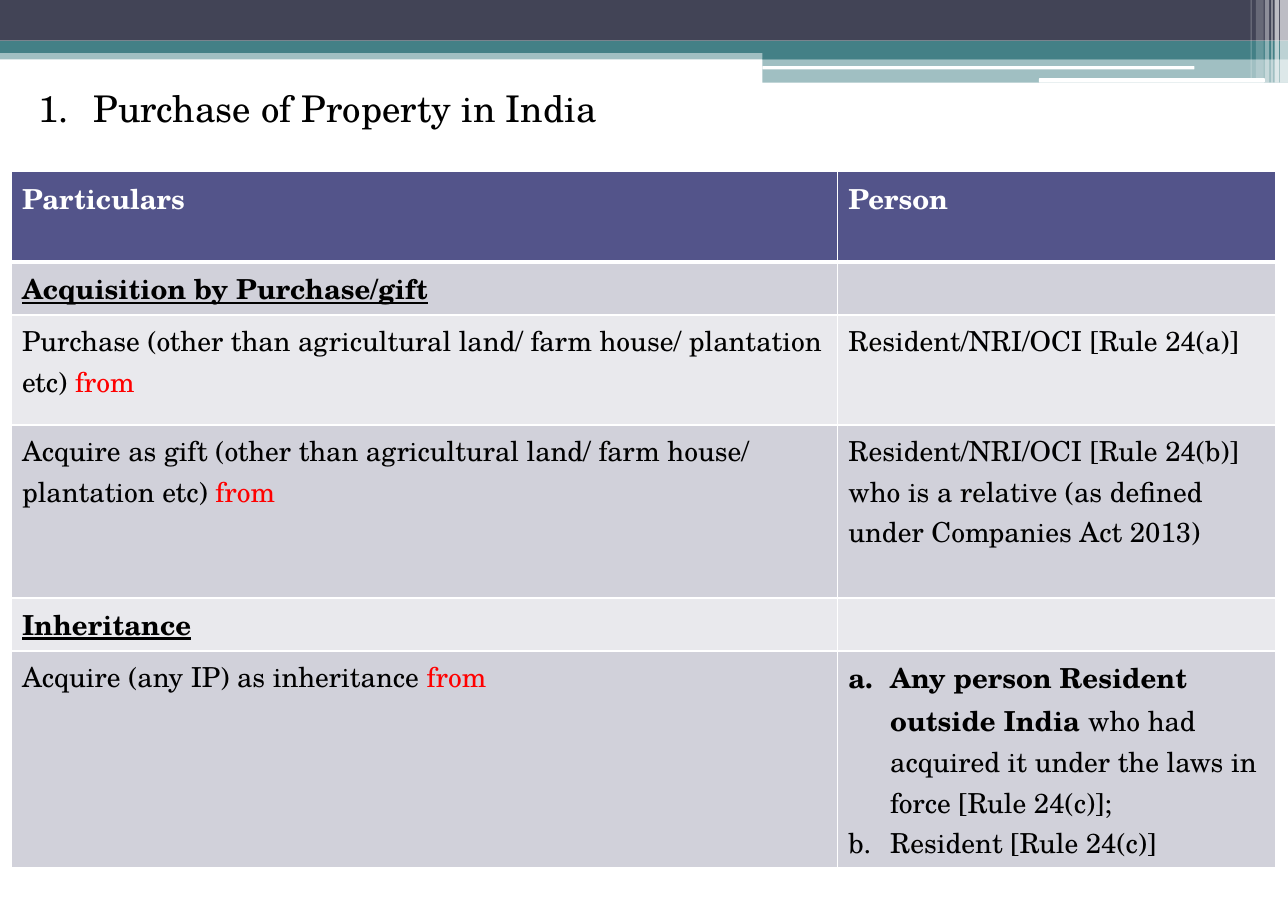
from lxml import etree
from pptx import Presentation
from pptx import util as u
from pptx.dml.color import RGBColor
from pptx.enum import shapes, text
from pptx.oxml import ns

FONT = "TeX Gyre Schola"
WHITE = RGBColor(0xFF, 0xFF, 0xFF)
BLACK = RGBColor(0, 0, 0)
RED = RGBColor(0xFF, 0, 0)
NAVY = RGBColor(0x42, 0x44, 0x56)
TEAL = RGBColor(0x43, 0x80, 0x86)
INDIGO = RGBColor(0x53, 0x54, 0x8A)
BAND_DARK = RGBColor(0xD1, 0xD1, 0xDA)
BAND_LIGHT = RGBColor(0xE9, 0xE9, 0xED)


def add_run(paragraph, words, size=18, color=BLACK, bold=False, underline=False):
    run = paragraph.add_run()
    run.text = words
    font = run.font
    font.name, font.size, font.bold, font.underline = FONT, u.Pt(size), bold, underline
    font.color.rgb = color


def number_paragraph(paragraph, style, margin, indent):
    properties = paragraph._p.get_or_add_pPr()
    properties.set("marL", str(u.Inches(margin)))
    properties.set("indent", str(u.Inches(indent)))
    bullet_font = etree.SubElement(properties, ns.qn("a:buFont"))
    bullet_font.set("typeface", FONT)
    etree.SubElement(properties, ns.qn("a:buAutoNum")).set("type", style)


presentation = Presentation()
presentation.slide_width = u.Inches(11.69)
presentation.slide_height = u.Inches(8.27)
slide = presentation.slides.add_slide(presentation.slide_layouts[6])

RECT = shapes.MSO_SHAPE.RECTANGLE
ROUND = shapes.MSO_SHAPE.ROUNDED_RECTANGLE
banner = [
    (RECT, 0, 0.44, 11.69, 0.1, TEAL, 50),
    (RECT, 0, 0, 11.69, 0.37, NAVY, 100),
    (RECT, 0, 0.37, 11.69, 0.11, TEAL, 100),
    (RECT, 6.92, 0.43, 4.77, 0.11, TEAL, 100),
    (RECT, 6.92, 0.53, 4.77, 0.22, TEAL, 50),
    (ROUND, 6.92, 0.6, 3.92, 0.03, WHITE, 100),
    (ROUND, 9.43, 0.71, 2.05, 0.04, WHITE, 100),
    (RECT, 11.62, 0, 0.07, 0.75, WHITE, 65),
    (RECT, 11.57, 0, 0.04, 0.75, WHITE, 65),
    (RECT, 11.54, 0, 0.01, 0.75, WHITE, 60),
    (RECT, 11.48, 0, 0.04, 0.75, WHITE, 40),
    (RECT, 11.4, 0, 0.07, 0.71, WHITE, 20),
    (RECT, 11.35, 0, 0.01, 0.71, WHITE, 30),
]
for kind, left, top, width, height, color, opacity in banner:
    shape = slide.shapes.add_shape(
        kind, u.Inches(left), u.Inches(top), u.Inches(width), u.Inches(height))
    shape.shadow.inherit = False
    shape.line.fill.background()
    shape.fill.solid()
    shape.fill.fore_color.rgb = color
    if opacity < 100:
        color_element = shape._element.spPr.find(ns.qn("a:solidFill"))[0]
        etree.SubElement(color_element, ns.qn("a:alpha")).set("val", str(opacity * 1000))

title = slide.shapes.add_textbox(u.Inches(0.1), u.Inches(0.72), u.Inches(11.5), u.Inches(0.7))
frame = title.text_frame
frame.word_wrap = True
frame.vertical_anchor = text.MSO_ANCHOR.TOP
frame.margin_left = frame.margin_right = u.Inches(0.11)
frame.margin_top = frame.margin_bottom = u.Inches(0.06)
paragraph = frame.paragraphs[0]
paragraph.space_before = u.Pt(3.4)
number_paragraph(paragraph, "arabicPeriod", 0.64, -0.5)
add_run(paragraph, "Purchase of Property in India", 24)

heading = {"bold": True, "color": WHITE}
section = {"bold": True, "underline": True}
source = ("from", {"color": RED})
rows = [
    (0.82, INDIGO, [("Particulars", heading)], [[("Person", heading)]]),
    (0.48, BAND_DARK, [("Acquisition by Purchase/gift", section)], []),
    (1, BAND_LIGHT,
     [("Purchase (other than agricultural land/ farm house/ plantation etc) ", {}), source],
     [[("Resident/NRI/OCI [Rule 24(a)]", {})]]),
    (1.57, BAND_DARK,
     [("Acquire as gift (other than agricultural land/ farm house/ plantation etc) ", {}), source],
     [[("Resident/NRI/OCI [Rule 24(b)] who is a relative "
        "(as defined under Companies Act 2013)", {})]]),
    (0.48, BAND_LIGHT, [("Inheritance", section)], []),
    (1.97, BAND_DARK,
     [("Acquire (any IP) as inheritance ", {}), source],
     [[("Any person Resident outside India ", {"bold": True}),
       ("who had acquired it under the laws in force [Rule 24(c)];", {})],
      [("Resident [Rule 24(c)]", {})]]),
]

table = slide.shapes.add_table(
    len(rows), 2, u.Inches(0.1), u.Inches(1.56), u.Inches(11.48),
    u.Inches(sum(row[0] for row in rows))).table
table.columns[0].width = u.Inches(7.5)
table.columns[1].width = u.Inches(3.98)

for row_index, (height, fill, particulars, person) in enumerate(rows):
    table.rows[row_index].height = u.Inches(height)
    for column_index, paragraphs in enumerate([[particulars], person]):
        cell = table.cell(row_index, column_index)
        cell_properties = cell._tc.get_or_add_tcPr()
        for side in "LRTB":
            thick = (row_index, side) in [(0, "B"), (1, "T")]
            line = etree.SubElement(cell_properties, ns.qn(f"a:ln{side}"))
            line.set("w", str(u.Pt(3 if thick else 1)))
            line_fill = etree.SubElement(line, ns.qn("a:solidFill"))
            etree.SubElement(line_fill, ns.qn("a:srgbClr")).set("val", str(WHITE))
        cell.fill.solid()
        cell.fill.fore_color.rgb = fill
        for index, runs in enumerate(paragraphs):
            frame = cell.text_frame
            paragraph = frame.add_paragraph() if index else frame.paragraphs[0]
            if len(paragraphs) > 1:
                number_paragraph(paragraph, "alphaLcPeriod", 0.38, -0.38)
            for words, style in runs:
                add_run(paragraph, words, **style)

presentation.save("out.pptx")
